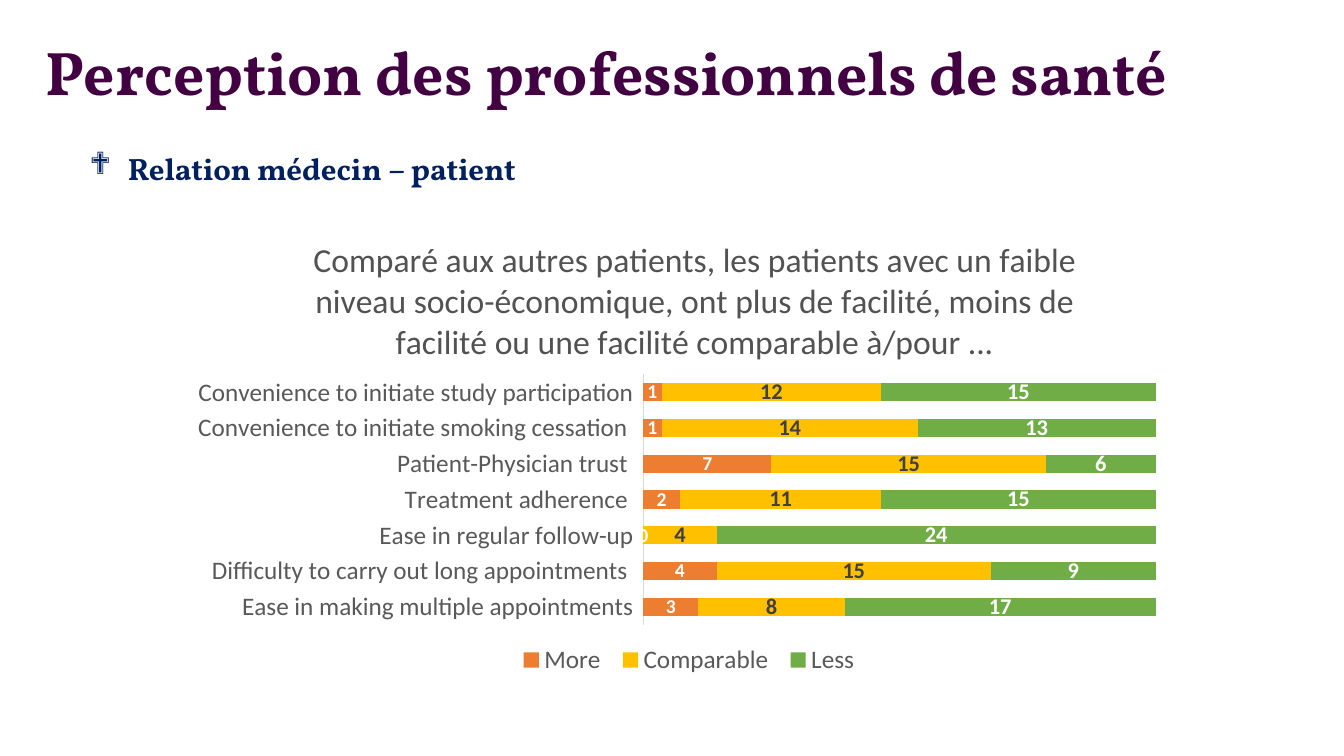
"""Build the slide on how health professionals see the doctor-patient bond."""
from lxml import etree
from pptx import Presentation
from pptx.chart.data import CategoryChartData
from pptx.dml.color import RGBColor
from pptx.enum.chart import XL_CHART_TYPE, XL_LEGEND_POSITION, XL_TICK_LABEL_POSITION, XL_TICK_MARK
from pptx.enum.text import MSO_ANCHOR, PP_ALIGN
from pptx.oxml import parse_xml
from pptx.oxml.ns import nsdecls, qn
from pptx.util import Inches, Pt

STACKED = XL_CHART_TYPE.BAR_STACKED
BOTTOM = XL_LEGEND_POSITION.BOTTOM
LOW = XL_TICK_LABEL_POSITION.LOW
NO_TICK = XL_TICK_MARK.NONE
MIDDLE = MSO_ANCHOR.MIDDLE
CENTER = PP_ALIGN.CENTER

HEAD = "Perception des professionnels de santé "
TOPIC = "Relation médecin – patient"
ASK = ("Comparé aux autres patients, les patients avec un faible niveau socio-économique, "
       "ont plus de facilité, moins de facilité ou une facilité comparable à/pour ...")
ROWS = [
    ("Ease in making multiple appointments", 3, 8, 17),
    ("Difficulty to carry out long appointments ", 4, 15, 9),
    ("Ease in regular follow-up", 0, 4, 24),
    ("Treatment adherence ", 2, 11, 15),
    ("Patient-Physician trust ", 7, 15, 6),
    ("Convenience to initiate smoking cessation ", 1, 14, 13),
    ("Convenience to initiate study participation", 1, 12, 15),
]
SERIES = [("More ", "orange", "white", 14), ("Comparable ", "gold", "dark", 16),
          ("Less  ", "green", "white", 16)]
COLORS = {"plum": "420042", "navy": "002060", "orange": "ED7D31", "gold": "FFC000",
          "green": "70AD47", "white": "FFFFFF", "dark": "404040", "gray": "595959",
          "ask": "525252", "line": "D9D9D9"}
SERIF, SANS = "Vollkorn", "Calibri"
WIDE, HIGH = 13.33, 7.5
HEAD_BOX = (0.33, 0.02, 11.5, 1.45)
TOPIC_BOX = (0.44, 1.26, 12.06, 0.88)
CHART_BOX = (1.81, 2.15, 10.16, 4.6)
PLOT = {"x": 0.45, "y": 0.34, "w": 0.5, "h": 0.54}


def color(name):
    return RGBColor.from_string(COLORS[name])


def style(font, face, size, hue, bold=False):
    font.name, font.size, font.bold = face, Pt(size), bold
    font.color.rgb = color(hue)


def add_text(slide, box, text, size, hue, space):
    frame = slide.shapes.add_textbox(*map(Inches, box)).text_frame
    frame.word_wrap, frame.vertical_anchor = True, MIDDLE
    para = frame.paragraphs[0]
    para.text, para.line_spacing = text, space
    return para


def add_bullet(para, mark, left, hang):
    props = para._p.get_or_add_pPr()
    props.set("marL", str(Inches(left)))
    props.set("indent", str(Inches(-hang)))
    etree.SubElement(props, qn("a:buFont")).set("typeface", "Wingdings")
    etree.SubElement(props, qn("a:buChar")).set("char", mark)


def place_plot(chart, spots):
    parts = [("layoutTarget", "inner"), ("xMode", "edge"), ("yMode", "edge"), *spots.items()]
    body = "".join(f'<c:{tag} val="{val}"/>' for tag, val in parts)
    area = chart._chartSpace.chart.plotArea
    for old in area.findall(qn("c:layout")):
        area.remove(old)
    area.insert(0, parse_xml(f'<c:layout {nsdecls("c")}><c:manualLayout>{body}'
                             '</c:manualLayout></c:layout>'))


def add_bars(slide):
    data = CategoryChartData()
    names, *cols = zip(*ROWS)
    data.categories = names
    for (name, *_), vals in zip(SERIES, cols):
        data.add_series(name, vals)
    chart = slide.shapes.add_chart(STACKED, *map(Inches, CHART_BOX), data).chart
    style(chart.font, SANS, 18, "gray")

    title = chart.chart_title.text_frame
    title.text = ASK
    style(title.paragraphs[0].font, SANS, 24, "ask")
    chart.has_legend = True
    chart.legend.position, chart.legend.include_in_layout = BOTTOM, False
    style(chart.legend.font, SANS, 18, "gray")

    axis = chart.category_axis
    axis.major_tick_mark = axis.minor_tick_mark = NO_TICK
    axis.tick_label_position = LOW
    axis.format.line.color.rgb = color("line")
    axis.format.line.width = Pt(0.75)
    style(axis.tick_labels.font, SANS, 18, "gray")
    scale = chart.value_axis
    scale.visible = scale.has_major_gridlines = False
    scale.minimum_scale, scale.maximum_scale = 0, sum(ROWS[0][1:])

    plot = chart.plots[0]
    plot.gap_width, plot.overlap, plot.vary_by_categories = 95, 100, False
    for bars, (_, fill, ink, size) in zip(plot.series, SERIES):
        bars.format.fill.solid()
        bars.format.fill.fore_color.rgb = color(fill)
        bars.data_labels.show_value = True
        style(bars.data_labels.font, SANS, size, ink, True)
    place_plot(chart, PLOT)


def main():
    deck = Presentation()
    deck.slide_width, deck.slide_height = Inches(WIDE), Inches(HIGH)
    slide = deck.slides.add_slide(deck.slide_layouts[6])
    topic = add_text(slide, TOPIC_BOX, TOPIC, 22, "navy", 0.8)
    add_bullet(topic, "❖", 0.73, 0.38)
    style(topic.font, SERIF, 22, "navy", True)
    add_bars(slide)
    head = add_text(slide, HEAD_BOX, HEAD, 44, "plum", 0.9)
    head.alignment = CENTER
    style(head.font, SERIF, 44, "plum", True)
    deck.save("out.pptx")


if __name__ == "__main__":
    main()
